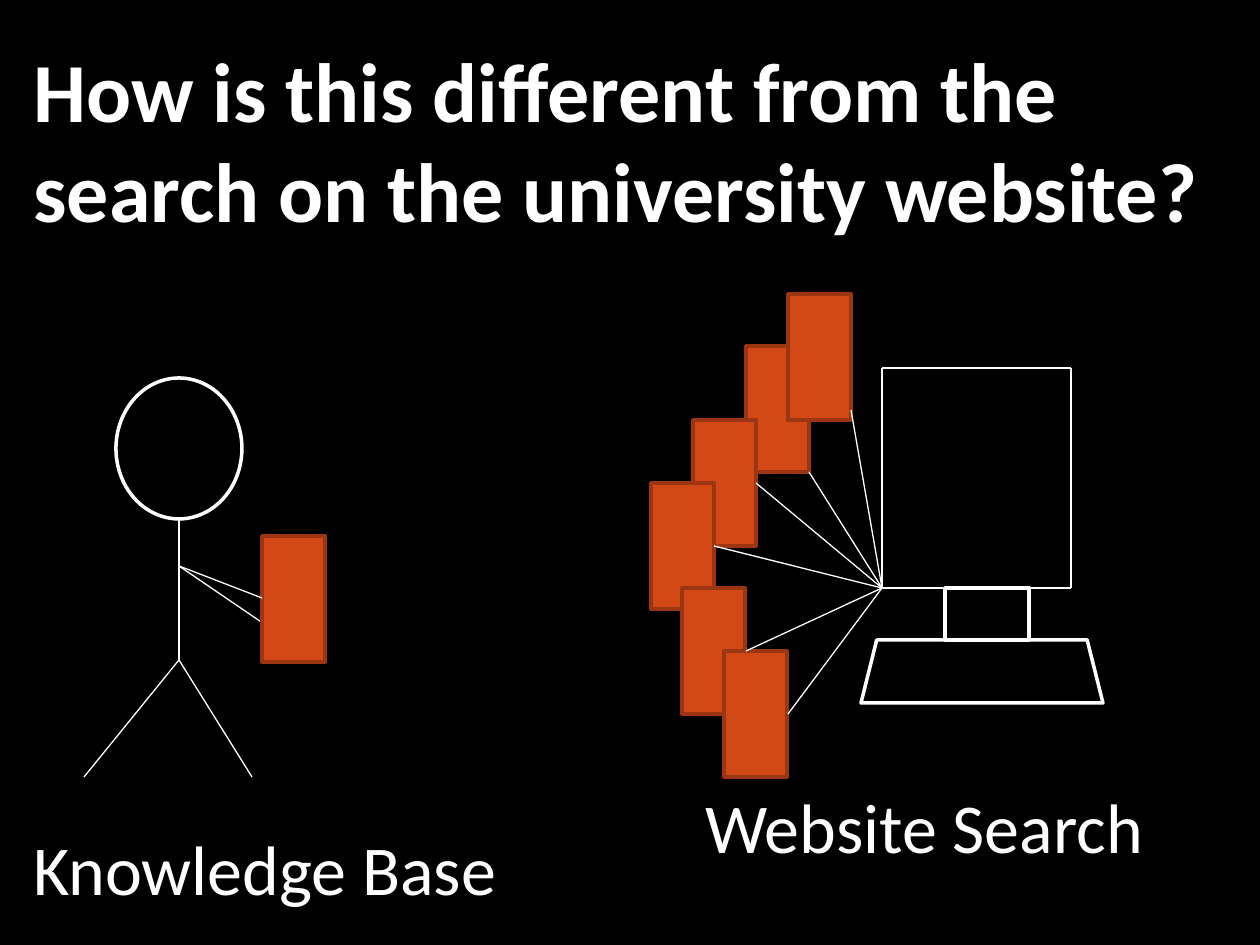
from lxml.etree import SubElement
from pptx import Presentation
from pptx.dml.color import RGBColor
from pptx.enum.shapes import MSO_CONNECTOR, MSO_SHAPE
from pptx.enum.text import MSO_AUTO_SIZE
from pptx.oxml.ns import qn
from pptx.util import Emu, Pt

EMU_PER_PX = 914400 / 126
BLACK, WHITE, ORANGE, RUST = "000000", "FFFFFF", "D34817", "9C3511"
DOCUMENT_SIZE = (63, 126)

TITLE = "How is this different from the search on the university website?"
TITLE_BOX = (21, 32, 1207, 217)

PERSON_LABEL = ("Knowledge Base", (21, 819, 514, 97))
HEAD = (116, 378, 126, 141)
NECK, SHOULDER, HIP = (179, 519), (179, 566), (179, 660)
FEET = [(84, 777), (252, 777)]
HIDDEN_HAND, VISIBLE_HAND = (273, 630), (262, 598)
PERSON_DOCUMENT = (262, 536)

COMPUTER_LABEL = ("Website Search", (693, 777, 514, 97))
SCREEN = (882, 368, 189, 220)
STAND = (945, 588, 84, 52)
KEYBOARD = (861, 640, 242, 63)
RESULT_DOCUMENTS = [(746, 346), (693, 420), (651, 483), (682, 588), (724, 651), (788, 294)]
RESULT_LINE_ENDS = [(788, 714), (746, 651), (714, 546), (756, 483), (809, 472), (851, 410)]


def px(value):
    return Emu(round(value * EMU_PER_PX))


def color(hex_string):
    return RGBColor.from_string(hex_string)


def add_text(shapes, text, box, size=40, bold=False):
    text_box = shapes.add_textbox(*map(px, box))
    frame = text_box.text_frame
    frame.word_wrap = True
    frame.auto_size = MSO_AUTO_SIZE.SHAPE_TO_FIT_TEXT
    run = frame.paragraphs[0].add_run()
    run.text = text
    run.font.name = "Calibri"
    run.font.size = Pt(size)
    run.font.bold = bold
    run.font.color.rgb = color(WHITE)


def add_outline(shapes, kind, box, line=WHITE, fill=None):
    shape = shapes.add_shape(kind, *map(px, box))
    shape.shadow.inherit = False
    if fill:
        shape.fill.solid()
        shape.fill.fore_color.rgb = color(fill)
    else:
        shape.fill.background()
    shape.line.color.rgb = color(line)
    shape.line.width = Pt(2)


def add_document(shapes, corner):
    add_outline(shapes, MSO_SHAPE.RECTANGLE, (*corner, *DOCUMENT_SIZE), line=RUST, fill=ORANGE)


def add_line(shapes, start, end):
    line = shapes.add_connector(MSO_CONNECTOR.STRAIGHT, *map(px, (*start, *end)))
    line.line.color.rgb = color(WHITE)
    line.line.width = Pt(0.75)
    SubElement(line._element.spPr, qn("a:effectLst"))


def draw_person(shapes):
    add_outline(shapes, MSO_SHAPE.OVAL, HEAD)
    add_line(shapes, NECK, HIP)
    for foot in FEET:
        add_line(shapes, HIP, foot)
    add_line(shapes, SHOULDER, HIDDEN_HAND)
    add_document(shapes, PERSON_DOCUMENT)
    add_line(shapes, SHOULDER, VISIBLE_HAND)
    add_text(shapes, *PERSON_LABEL)


def draw_computer(shapes):
    left, top, width, height = SCREEN
    right, bottom = left + width, top + height
    corners = [(left, top), (right, top), (right, bottom), (left, bottom)]
    for start, end in zip(corners, corners[1:] + corners[:1]):
        add_line(shapes, start, end)
    add_outline(shapes, MSO_SHAPE.RECTANGLE, STAND)
    add_outline(shapes, MSO_SHAPE.TRAPEZOID, KEYBOARD)
    for corner in RESULT_DOCUMENTS:
        add_document(shapes, corner)
    for end in RESULT_LINE_ENDS:
        add_line(shapes, (left, bottom), end)
    add_text(shapes, *COMPUTER_LABEL)


def main():
    presentation = Presentation()
    presentation.slide_width, presentation.slide_height = px(1260), px(945)
    slide = presentation.slides.add_slide(presentation.slide_layouts[6])
    slide.background.fill.solid()
    slide.background.fill.fore_color.rgb = color(BLACK)
    for draw in (draw_person, draw_computer):
        draw(slide.shapes.add_group_shape().shapes)
    add_text(slide.shapes, TITLE, TITLE_BOX, size=48, bold=True)
    presentation.save("out.pptx")


if __name__ == "__main__":
    main()
